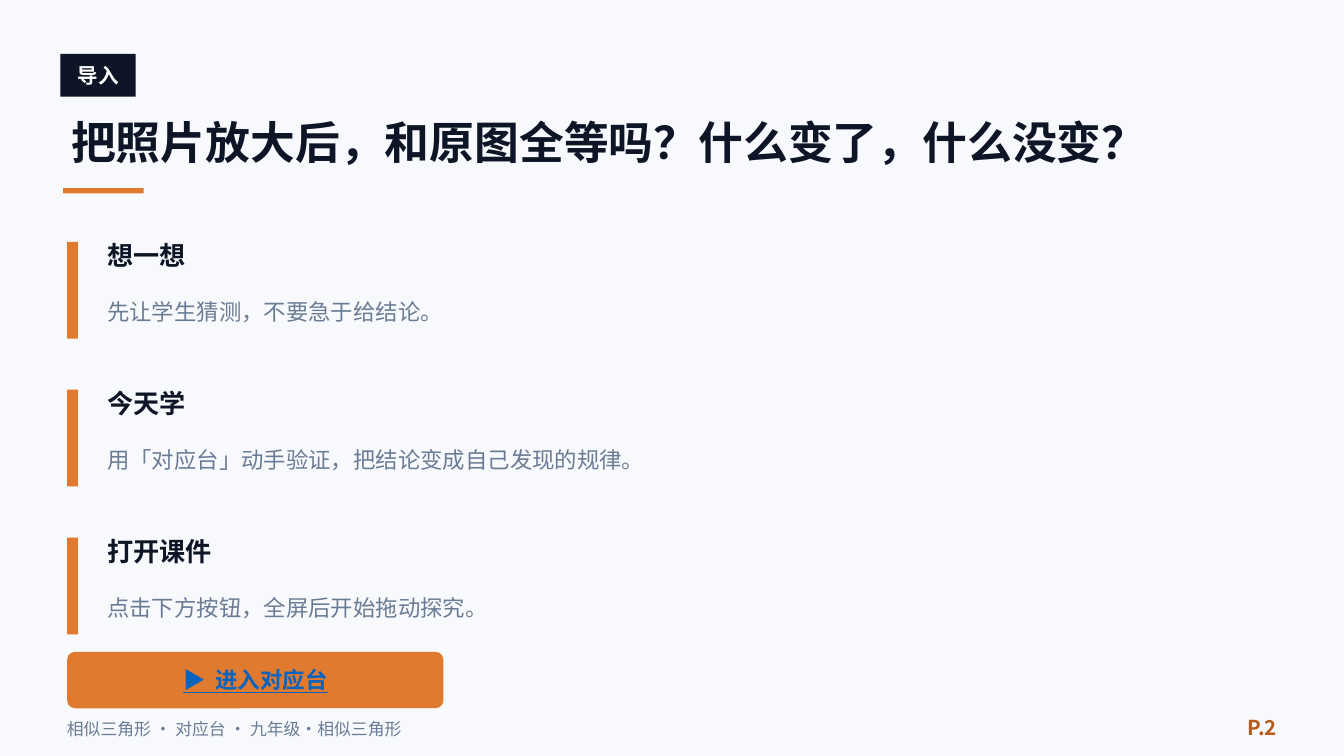
from dataclasses import dataclass
from typing import NamedTuple

from lxml import etree
from pptx import Presentation
from pptx import util as u
from pptx.dml.color import RGBColor
from pptx.enum import lang, shapes, text
from pptx.oxml import ns

PX = u.Inches(1) // 200  # 200 px to the inch


@dataclass(frozen=True)
class Theme:
    font: str = "Noto Sans CJK SC"
    paper: str = "F7F9FC"
    ink: str = "0D1526"
    accent: str = "E07A2F"
    accent_dark: str = "B85A18"
    muted: str = "6A7C95"
    link: str = "0563C1"
    white: str = "FFFFFF"
    title: int = 24
    heading: int = 14
    body: int = 12
    label: int = 11
    footer: int = 9


class Box(NamedTuple):
    left: int
    top: int
    width: int
    height: int

    def emu(self) -> list[u.Emu]:
        return [u.Emu(v * PX) for v in self]


class Card(NamedTuple):
    heading: str
    body: str


THEME = Theme()
CARDS = [
    Card("想一想", "先让学生猜测，不要急于给结论。"),
    Card("今天学", "用「对应台」动手验证，把结论变成自己发现的规律。"),
    Card("打开课件", "点击下方按钮，全屏后开始拖动探究。"),
]
CARD_TOP, CARD_PITCH = 360, 220
LEFT, CENTER, RIGHT = (
    text.PP_ALIGN.LEFT, text.PP_ALIGN.CENTER, text.PP_ALIGN.RIGHT)


def write_text(sp, content: str, *, size: int, color: str, bold: bool = False,
               underline: bool = False, align=LEFT) -> None:
    tf = sp.text_frame
    tf.word_wrap = True
    tf.auto_size = text.MSO_AUTO_SIZE.NONE
    tf.vertical_anchor = text.MSO_ANCHOR.MIDDLE
    p = tf.paragraphs[0]
    p.alignment = align
    r = p.add_run()
    r.text = content
    r.font.name = THEME.font
    r.font.size = u.Pt(size)
    r.font.bold = bold
    r.font.underline = underline
    r.font.color.rgb = RGBColor.from_string(color)
    r.font.language_id = lang.MSO_LANGUAGE_ID.SIMPLIFIED_CHINESE
    # East Asian characters take their own typeface
    latin = r.font._element.find(ns.qn("a:latin"))
    ea = etree.Element(ns.qn("a:ea"), typeface=THEME.font)
    latin.addnext(ea)


def add_text(s, box: Box, content: str, **style) -> None:
    write_text(s.shapes.add_textbox(*box.emu()), content, **style)


def add_block(s, box: Box, color: str, kind=shapes.MSO_SHAPE.RECTANGLE):
    sp = s.shapes.add_shape(kind, *box.emu())
    sp.shadow.inherit = False
    sp.fill.solid()
    sp.fill.fore_color.rgb = RGBColor.from_string(color)
    sp.line.fill.background()
    return sp


def add_card(s, top: int, card: Card) -> None:
    add_block(s, Box(100, top, 16, 144), THEME.accent)
    add_text(s, Box(140, top - 10, 1760, 60), card.heading,
             size=THEME.heading, color=THEME.ink, bold=True)
    add_text(s, Box(140, top + 54, 1760, 100), card.body,
             size=THEME.body, color=THEME.muted)


def main() -> None:
    prs = Presentation()
    prs.slide_width, prs.slide_height = 2000 * PX, 1125 * PX
    s = prs.slides.add_slide(prs.slide_layouts.get_by_name("Title Only"))
    s.background.fill.solid()
    s.background.fill.fore_color.rgb = RGBColor.from_string(THEME.paper)

    # Section tag, title and rule
    tag = add_block(s, Box(90, 80, 112, 64), THEME.ink)
    write_text(tag, "导入", size=THEME.label, color=THEME.white, bold=True,
               align=CENTER)
    title = s.shapes.title
    title.left, title.top, title.width, title.height = Box(
        86, 156, 1800, 110).emu()
    write_text(title, "把照片放大后，和原图全等吗？什么变了，什么没变？",
               size=THEME.title, color=THEME.ink, bold=True)
    add_block(s, Box(94, 280, 120, 8), THEME.accent)

    # Steps
    for i, card in enumerate(CARDS):
        add_card(s, CARD_TOP + i * CARD_PITCH, card)

    # Button
    button = add_block(s, Box(100, 970, 560, 84), THEME.accent,
                       shapes.MSO_SHAPE.ROUNDED_RECTANGLE)
    button.adjustments[0] = 0.14
    write_text(button, "▶  进入对应台", size=THEME.body, color=THEME.link,
               bold=True, underline=True, align=CENTER)

    # Footer
    add_text(s, Box(80, 1056, 1440, 56), "相似三角形 · 对应台 · 九年级·相似三角形",
             size=THEME.footer, color=THEME.muted)
    add_text(s, Box(1800, 1052, 120, 60), "P.2", size=THEME.label,
             color=THEME.accent_dark, bold=True, align=RIGHT)

    prs.save("out.pptx")


if __name__ == "__main__":
    main()
